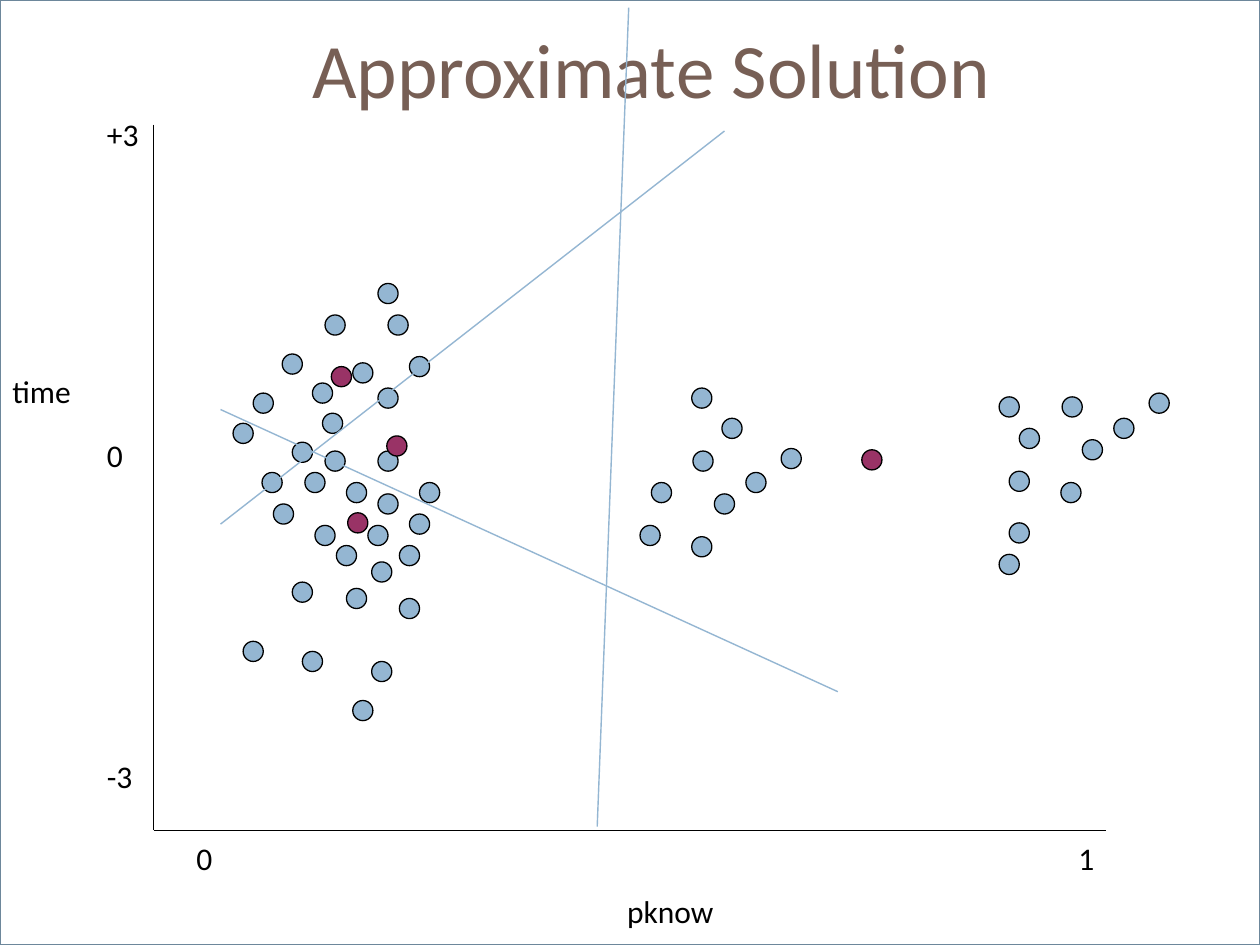
from lxml import etree
from pptx import Presentation
from pptx.dml.color import RGBColor
from pptx.enum.shapes import MSO_CONNECTOR, MSO_SHAPE
from pptx.enum.text import MSO_ANCHOR, PP_ALIGN
from pptx.oxml.ns import qn
from pptx.util import Inches, Pt

LEFT, CENTER = PP_ALIGN.LEFT, PP_ALIGN.CENTER
MIDDLE = MSO_ANCHOR.MIDDLE
STRAIGHT = MSO_CONNECTOR.STRAIGHT
OVAL, RECT = MSO_SHAPE.OVAL, MSO_SHAPE.RECTANGLE

FONT = "Calibri"
BLUE, PURPLE, BLACK = "94B6D2", "993366", "000000"
DOT = 0.16
PLOT = (1.22, 0.99, 7.56, 5.6)

CLUSTERS = [
    ((1.85, 2.25), [
        (1.15, 0), (0.73, 0.25), (1.23, 0.25), (0.39, 0.56), (1.4, 0.58),
        (0.95, 0.63), (0.63, 0.79), (1.15, 0.83), (0.16, 0.87), (0.71, 1.03),
        (0, 1.11), (0.47, 1.26), (0.73, 1.33), (1.15, 1.33), (0.23, 1.5),
        (0.57, 1.5), (0.9, 1.58), (1.48, 1.58), (1.15, 1.67), (0.32, 1.75),
        (1.4, 1.83), (0.65, 1.92), (1.07, 1.92), (0.82, 2.08), (1.32, 2.08),
        (1.1, 2.21), (0.47, 2.37), (0.9, 2.42), (1.32, 2.5), (0.08, 2.84),
        (0.55, 2.92), (1.1, 3), (0.95, 3.31)]),
    ((5.08, 3.08), [
        (0.41, 0), (0.65, 0.24), (1.12, 0.48), (0.42, 0.5), (0.84, 0.67),
        (0.09, 0.75), (0.59, 0.84), (0, 1.09), (0.41, 1.18)]),
    ((7.93, 3.12), [
        (1.19, 0), (0, 0.03), (0.5, 0.03), (0.91, 0.2), (0.16, 0.28),
        (0.66, 0.37), (0.08, 0.62), (0.49, 0.71), (0.08, 1.03), (0, 1.28)]),
]
CENTROIDS = [(1.41, 1.92), (1.54, 3.08), (5.62, 2.58), (1.85, 2.47)]
BOUNDARIES = [
    (4.53, 0.05, 0.53, 3.17),
    (5.43, 4.5, 0.53, 2.26),
    (3.77, -0.93, 3.52, 5.57),
]


def rgb(value):
    """Return the colour for a hex string."""
    return RGBColor.from_string(value)


def add_solid(s, kind, box, fill, line, weight):
    """Add a filled and outlined preset shape."""
    sp = s.shapes.add_shape(kind, *map(Inches, box))
    sp.shadow.inherit = False
    sp.fill.solid()
    sp.fill.fore_color.rgb = rgb(fill)
    sp.line.color.rgb = rgb(line)
    sp.line.width = Pt(weight)


def add_line(s, ends, color, weight):
    """Add a straight line without a shadow."""
    sp = s.shapes.add_connector(STRAIGHT, *map(Inches, ends))
    sp.line.color.rgb = rgb(color)
    sp.line.width = Pt(weight)
    etree.SubElement(sp._element.spPr, qn("a:effectLst"))


def add_text(s, box, text, size=18, color=BLACK, align=LEFT):
    """Add one line of text, centred vertically in its box."""
    tf = s.shapes.add_textbox(*map(Inches, box)).text_frame
    tf.word_wrap = True
    tf.vertical_anchor = MIDDLE
    p = tf.paragraphs[0]
    p.alignment = align
    r = p.add_run()
    r.text = text
    r.font.name = FONT
    r.font.size = Pt(size)
    r.font.color.rgb = rgb(color)


def add_dots(s, origin, points, color):
    """Add equal dots at offsets from an origin."""
    left, top = origin
    for x, y in points:
        add_solid(s, OVAL, (left + x, top + y, DOT, DOT), color, BLACK, 0.75)


def add_axes(s, box):
    """Draw both axes with their tick labels and names."""
    left, top, width, height = box
    bottom = top + height
    add_line(s, (left, top, left, bottom), BLACK, 0.75)
    add_line(s, (left, bottom, left + width, bottom), BLACK, 0.75)
    for i, label in enumerate(("+3", "0", "-3")):
        add_text(s, (left - 0.47, top - 0.13 + 2.55 * i, 0.63, 0.4), label)
    for i, label in enumerate(("0", "1")):
        add_text(s, (left + 0.24 + 7 * i, bottom + 0.02, 0.4, 0.4), label)
    add_text(s, (left - 1.22, top + 1.91, 0.83, 0.4), "time")
    add_text(s, (left + 0.24, bottom + 0.44, 7.72, 0.4), "pknow", align=CENTER)


def add_boundaries(s, box):
    """Draw the lines that divide the plot."""
    left, top = box[:2]
    for x1, y1, x2, y2 in BOUNDARIES:
        ends = (left + x1, top + y1, left + x2, top + y2)
        add_line(s, ends, BLUE, 0.79)


def main():
    """Build the slide and save it."""
    prs = Presentation()
    prs.slide_width, prs.slide_height = Inches(10), Inches(7.5)
    s = prs.slides.add_slide(prs.slide_layouts[6])
    add_solid(s, RECT, (0, 0, 10, 7.5), "FFFFFF", "6D879B", 1.5)
    add_axes(s, PLOT)
    for origin, points in CLUSTERS:
        add_dots(s, origin, points, BLUE)
    add_dots(s, PLOT[:2], CENTROIDS, PURPLE)
    add_text(s, (0.71, 0, 8.92, 1.08), "Approximate Solution", 44, "775F55", CENTER)
    add_boundaries(s, PLOT)
    prs.save("out.pptx")


if __name__ == "__main__":
    main()
